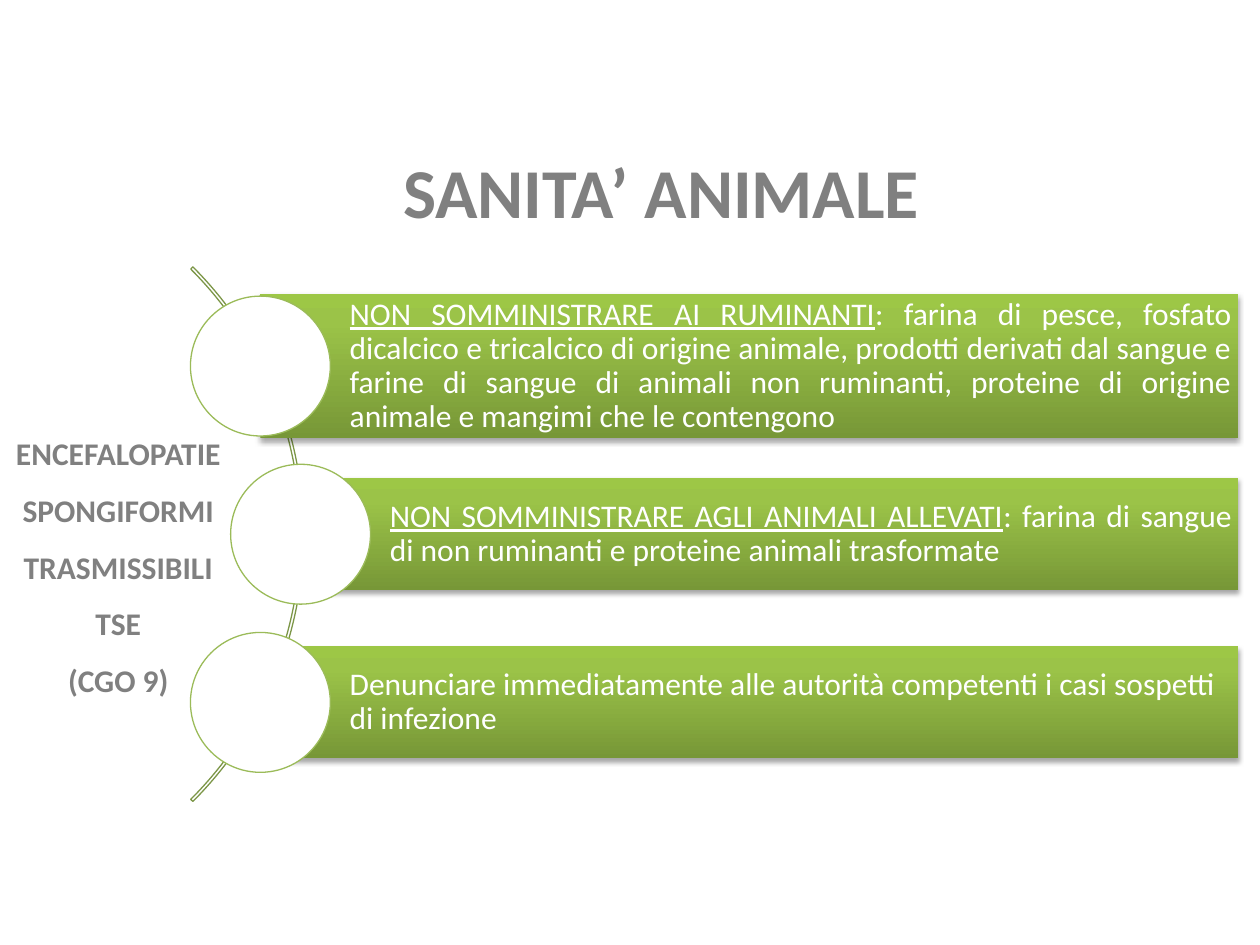
from dataclasses import dataclass

import lxml.etree
import pptx
import pptx.dml.color
import pptx.enum.shapes
import pptx.enum.text
import pptx.oxml
import pptx.oxml.ns
import pptx.util

Cm = pptx.util.Cm
Pt = pptx.util.Pt
SHAPE = pptx.enum.shapes.MSO_SHAPE
ALIGN = pptx.enum.text.PP_ALIGN
ANCHOR = pptx.enum.text.MSO_ANCHOR
qn = pptx.oxml.ns.qn


@dataclass(frozen=True)
class Theme:
    """Colours, font and type sizes of the slide."""
    font: str = "Calibri"
    grey: str = "808080"
    white: str = "FFFFFF"
    ring: str = "9BBB59"
    arc: str = "7C9647"
    bar_stops: tuple = ((0, "779737"), (80, "9BC348"), (100, "9DC746"))
    title_size: int = 40
    text_size: int = 18
    line_width: float = 0.75


THEME = Theme()

RULES = (
    ("NON SOMMINISTRARE AI RUMINANTI",
     ": farina di pesce, fosfato dicalcico e tricalcico di origine animale, "
     "prodotti derivati dal sangue e farine di sangue di animali non ruminanti, "
     "proteine di origine animale e mangimi che le contengono"),
    ("NON SOMMINISTRARE AGLI ANIMALI ALLEVATI",
     ": farina di sangue di non ruminanti e proteine animali trasformate"),
    ("", "Denunciare immediatamente alle autorità competenti i casi sospetti di infezione"),
)
TOPIC = ("ENCEFALOPATIE", "SPONGIFORMI", "TRASMISSIBILI", "TSE", "(CGO 9)")


def rgb(value):
    """Return the colour for a hex string."""
    return pptx.dml.color.RGBColor.from_string(value)


def style_font(font, size, color, bold=False):
    """Give a font the theme face with a size and colour."""
    font.name = THEME.font
    font.size = Pt(size)
    font.bold = bold
    font.color.rgb = rgb(color)


def add_outlined(slide, kind, box, line_color):
    """Add a white preset shape with a thin outline."""
    outlined = slide.shapes.add_shape(kind, *map(Cm, box))
    outlined.shadow.inherit = False
    outlined.fill.solid()
    outlined.fill.fore_color.rgb = rgb(THEME.white)
    outlined.line.color.rgb = rgb(line_color)
    outlined.line.width = Pt(THEME.line_width)
    return outlined


def shade_bar(bar):
    """Give a bar its green gradient and soft shadow."""
    bar.line.fill.background()
    bar.fill.gradient()
    bar.fill.gradient_angle = 90
    properties = bar.fill._xPr
    stops = properties.find(".//" + qn("a:gsLst"))
    for stop in list(stops):
        stops.remove(stop)
    for position, color in THEME.bar_stops:
        stop = lxml.etree.SubElement(stops, qn("a:gs"), pos=str(position * 1000))
        lxml.etree.SubElement(stop, qn("a:srgbClr"), val=color)
    bar.shadow.inherit = False
    shadow = lxml.etree.SubElement(
        properties.find(qn("a:effectLst")), qn("a:outerShdw"),
        blurRad=str(Pt(3.1)), dist=str(Pt(1.8)), dir="5400000", rotWithShape="0")
    shade = lxml.etree.SubElement(shadow, qn("a:srgbClr"), val="000000")
    lxml.etree.SubElement(shade, qn("a:alpha"), val="35000")


def add_rule(slide, box, bar_height, heading, detail):
    """Place one rule: a green bar that starts at the centre of a circle."""
    left, top, width, diameter = box
    radius = diameter / 2
    bar = slide.shapes.add_shape(
        SHAPE.RECTANGLE, Cm(left + radius), Cm(top + radius - bar_height / 2),
        Cm(width - radius), Cm(bar_height))
    shade_bar(bar)
    frame = bar.text_frame
    frame.word_wrap = True
    frame.vertical_anchor = ANCHOR.MIDDLE
    frame.margin_left = Cm(1.8)
    frame.margin_right = frame.margin_top = frame.margin_bottom = Cm(0.13)
    paragraph = frame.paragraphs[0]
    paragraph.alignment = ALIGN.JUSTIFY if heading else ALIGN.LEFT
    paragraph.line_spacing = 0.9
    for wording in filter(None, (heading, detail)):
        run = paragraph.add_run()
        run.text = wording
        style_font(run.font, THEME.text_size, THEME.white)
        run.font.underline = wording == heading
    add_outlined(slide, SHAPE.OVAL, (left, top, diameter, diameter), THEME.ring)


def add_rules(slide, box):
    """Place the arc and the three rules that follow its curve."""
    left, top, width, height = box
    arc_size, diameter, bulge = 15.24, 2.82, 0.81
    arc = add_outlined(
        slide, SHAPE.BLOCK_ARC,
        (left - 12.96, top + (height - arc_size) / 2, arc_size, arc_size), THEME.arc)
    for index, value in enumerate((189, 27, 0.004)):
        arc.adjustments[index] = value
    pitch = (height - diameter) / (len(RULES) - 1)
    for index, (rule, bar_height) in enumerate(zip(RULES, (2.92, 2.26, 2.26))):
        shift = bulge if index == 1 else 0
        row = (left + shift, top + index * pitch, width - shift, diameter)
        add_rule(slide, row, bar_height, *rule)


def add_heading(slide, box, lines, size, bottom_margin=0.13):
    """Place centred bold grey lines with wide line spacing."""
    frame = slide.shapes.add_textbox(*map(Cm, box)).text_frame
    frame.word_wrap = True
    frame.vertical_anchor = ANCHOR.MIDDLE
    frame.margin_bottom = Cm(bottom_margin)
    frame.text = "\n".join(lines)
    for paragraph in frame.paragraphs:
        paragraph.alignment = ALIGN.CENTER
        paragraph.line_spacing = 1.5
        style_font(paragraph.runs[0].font, size, THEME.grey, bold=True)


def main():
    """Build the slide and save it."""
    deck = pptx.Presentation()
    deck.slide_width, deck.slide_height = Cm(25.4), Cm(19.05)
    slide = deck.slides.add_slide(deck.slide_layouts[6])
    add_rules(slide, (3.84, 5.97, 21.12, 9.6))
    add_heading(slide, (1.9, 1.93, 22.86, 3), ["SANITA’ ANIMALE"], THEME.title_size)
    add_heading(slide, (-0.5, 8.92, 5.77, 5.77), TOPIC, THEME.text_size, 1.27)
    deck.save("out.pptx")


if __name__ == "__main__":
    main()
